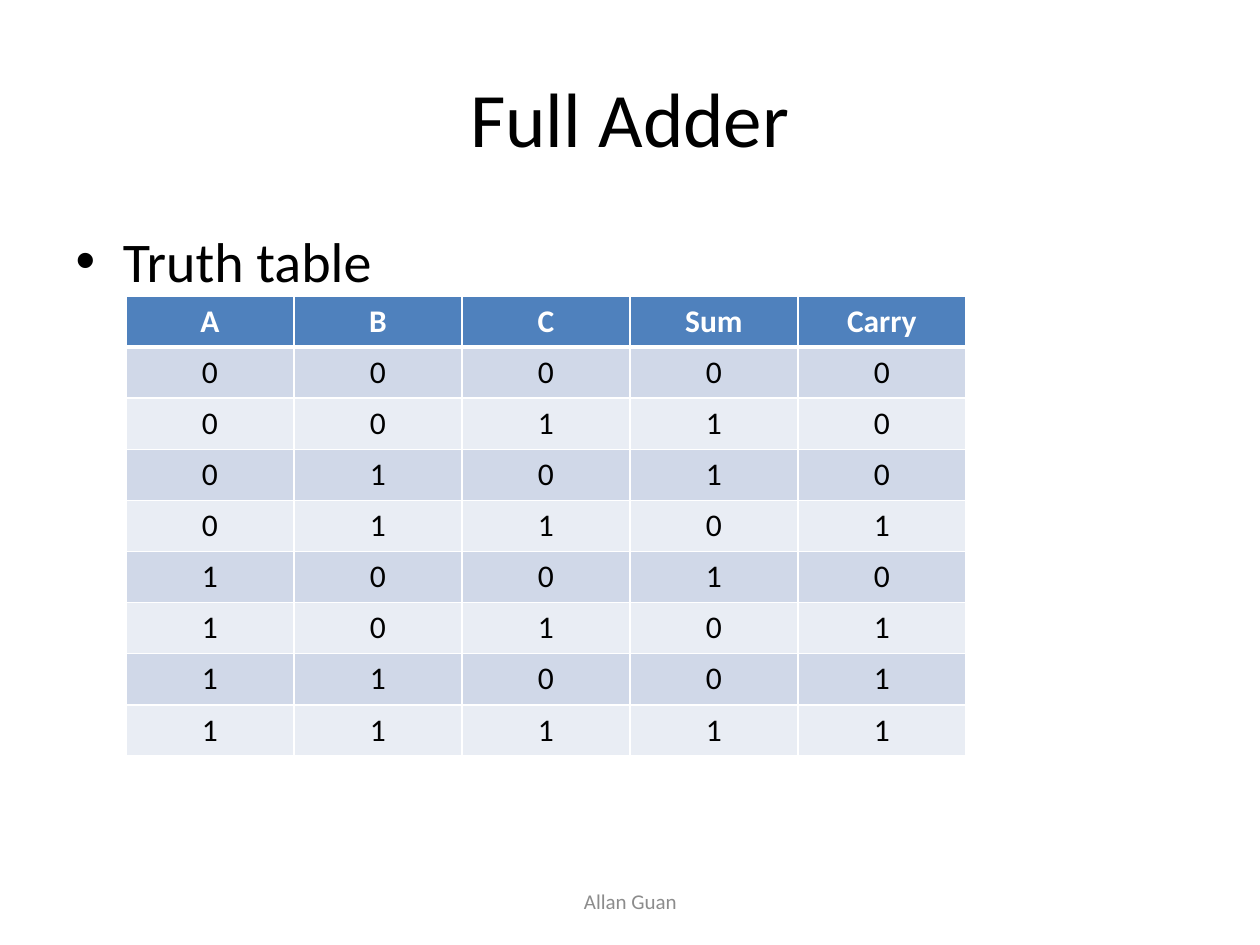
from itertools import product

from lxml import etree
from pptx import Presentation
from pptx.dml.color import RGBColor
from pptx.enum.text import MSO_ANCHOR, PP_ALIGN
from pptx.oxml.ns import qn
from pptx.util import Emu, Pt

CENTER = PP_ALIGN.CENTER
LEFT = PP_ALIGN.LEFT
MIDDLE = MSO_ANCHOR.MIDDLE
TOP = MSO_ANCHOR.TOP
TITLE_AND_CONTENT = 1

PIXELS_PER_INCH = 126
COLORS = {
    "text": "000000",
    "footer": "8C8C8C",
    "white": "FFFFFF",
    "header": "4F81BD",
    "odd_row": "D0D8E8",
    "even_row": "E9EDF4",
}
COLUMN_WIDTH = 168
ROW_HEIGHT = 51
THIN = 1
THICK = 3


def px(length):
    return Emu(round(length * 914400 / PIXELS_PER_INCH))


def rgb(name):
    return RGBColor.from_string(COLORS[name])


def write_text(text_frame, text, size, color, alignment=CENTER, bold=False):
    paragraph = text_frame.paragraphs[0]
    paragraph.alignment = alignment
    run = paragraph.add_run()
    run.text = text
    font_format = {"name": "Calibri", "size": Pt(size), "bold": bold}
    for attribute, value in font_format.items():
        setattr(run.font, attribute, value)
    run.font.color.rgb = rgb(color)


def place_text(shape, box, anchor, text, size, color, alignment=CENTER):
    for attribute, length in zip(("left", "top", "width", "height"), box):
        setattr(shape, attribute, px(length))
    shape.text_frame.word_wrap = True
    shape.text_frame.vertical_anchor = anchor
    write_text(shape.text_frame, text, size, color, alignment)


def set_borders(cell, widths):
    properties = cell._tc.get_or_add_tcPr()
    for side, width in widths.items():
        line = etree.SubElement(properties, qn(f"a:ln{side}"), w=str(Pt(width)))
        fill = etree.SubElement(line, qn("a:solidFill"))
        etree.SubElement(fill, qn("a:srgbClr"), val=COLORS["white"])


def format_cell(cell, text, row):
    is_header = row == 0
    set_borders(cell, {
        "L": THIN,
        "R": THIN,
        "T": THICK if row == 1 else THIN,
        "B": THICK if is_header else THIN,
    })
    fill_name = "header" if is_header else ("even_row", "odd_row")[row % 2]
    cell.fill.solid()
    cell.fill.fore_color.rgb = rgb(fill_name)
    write_text(cell.text_frame, text, 18, "white" if is_header else "text", bold=is_header)


def truth_table_rows():
    rows = [("A", "B", "C", "Sum", "Carry")]
    for bits in product((0, 1), repeat=3):
        carry, total = divmod(sum(bits), 2)
        rows.append((*bits, total, carry))
    return rows


def add_truth_table(slide, left, top):
    rows = truth_table_rows()
    row_count, column_count = len(rows), len(rows[0])
    table = slide.shapes.add_table(
        row_count, column_count, px(left), px(top),
        px(column_count * COLUMN_WIDTH), px(row_count * ROW_HEIGHT),
    ).table
    for column in table.columns:
        column.width = px(COLUMN_WIDTH)
    for row, values in enumerate(rows):
        table.rows[row].height = px(ROW_HEIGHT)
        for column, value in enumerate(values):
            format_cell(table.cell(row, column), str(value), row)


def main():
    presentation = Presentation()
    presentation.slide_width = px(1260)
    presentation.slide_height = px(945)
    slide = presentation.slides.add_slide(presentation.slide_layouts[TITLE_AND_CONTENT])
    title, body = slide.placeholders
    place_text(title, (63, 38, 1134, 157), MIDDLE, "Full Adder", 44, "text")
    place_text(body, (63, 220, 1134, 624), TOP, "Truth table", 32, "text", LEFT)
    add_truth_table(slide, 126, 296)
    footer = slide.shapes.add_textbox(0, 0, 0, 0)
    place_text(footer, (431, 876, 399, 50), MIDDLE, "Allan Guan", 12, "footer")
    presentation.save("out.pptx")


if __name__ == "__main__":
    main()
